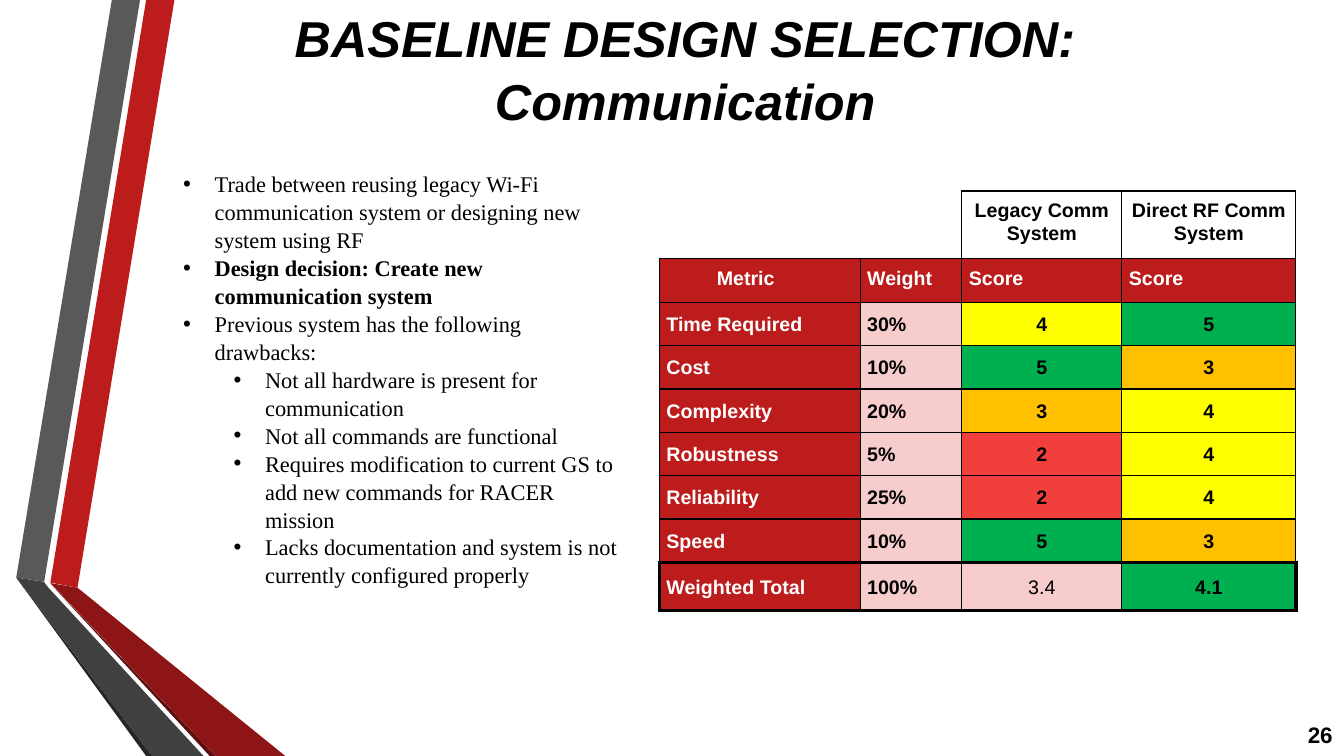
from lxml import etree
from pptx import Presentation
from pptx.dml.color import RGBColor
from pptx.enum.text import MSO_ANCHOR, PP_ALIGN
from pptx.oxml.ns import qn
from pptx.util import Pt

LEFT, CENTER, RIGHT, JUSTIFY = PP_ALIGN.LEFT, PP_ALIGN.CENTER, PP_ALIGN.RIGHT, PP_ALIGN.JUSTIFY
TOP, MIDDLE = MSO_ANCHOR.TOP, MSO_ANCHOR.MIDDLE

BLACK = RGBColor(0x00, 0x00, 0x00)
WHITE = RGBColor(0xFF, 0xFF, 0xFF)
RED = RGBColor(0xBC, 0x1C, 0x1C)
DARK_RED = RGBColor(0x8D, 0x15, 0x15)
DEEP_RED = RGBColor(0x5E, 0x0E, 0x0E)
GRAY = RGBColor(0x59, 0x59, 0x59)
DARK_GRAY = RGBColor(0x40, 0x40, 0x40)
DEEP_GRAY = RGBColor(0x26, 0x26, 0x26)
PINK = RGBColor(0xF7, 0xCC, 0xCC)
GREEN = RGBColor(0x00, 0xB0, 0x50)
YELLOW = RGBColor(0xFF, 0xFF, 0x00)
ORANGE = RGBColor(0xFF, 0xC0, 0x00)
LIGHT_RED = RGBColor(0xF1, 0x3F, 0x3B)
SCORE_FILLS = {5: GREEN, 4: YELLOW, 3: ORANGE, 2: LIGHT_RED}

SANS, SERIF = "Arial", "Times New Roman"
NO_STYLE = "{2D5ABB26-0587-4C30-8999-92F81FD0307C}"

RIBBONS = [
    (RED, [(36, 416.2), (55.4, 419.8), (124.6, 0), (104.4, 0)]),
    (GRAY, [(100, 0), (79.9, 0), (11.6, 412.6), (31.6, 415.5)]),
    (DEEP_GRAY, [(11.6, 412.6), (104.4, 540), (108.7, 540)]),
    (DEEP_RED, [(36, 416.9), (149.8, 540), (154.1, 540)]),
    (DARK_RED, [(36, 416.5), (154.1, 540), (203.8, 540), (55.4, 419.8)]),
    (DARK_GRAY, [(145.4, 540), (34.6, 419.8), (31.3, 415.5), (11.6, 412.6), (108.7, 540)]),
]

BULLETS = [
    (0, False, "Trade between reusing legacy Wi-Fi communication system or designing new system using RF"),
    (0, True, "Design decision: Create new communication system"),
    (0, False, "Previous system has the following drawbacks:"),
    (1, False, "Not all hardware is present for communication"),
    (1, False, "Not all commands are functional"),
    (1, False, "Requires modification to current GS to add new commands for RACER mission"),
    (1, False, "Lacks documentation and system is not currently configured properly"),
]

SYSTEMS = ["Legacy Comm System", "Direct RF Comm System"]
HEADINGS = ["Metric", "Weight", "Score", "Score"]
METRICS = [
    ("Time Required", "30%", 4, 5),
    ("Cost", "10%", 5, 3),
    ("Complexity", "20%", 3, 4),
    ("Robustness", "5%", 2, 4),
    ("Reliability", "25%", 2, 4),
    ("Speed", "10%", 5, 3),
]
TOTALS = ("Weighted Total", "100%", "3.4", "4.1")


class SlideBuilder:
    """Holds the text style and the current slide, and adds elements to it."""

    def __init__(self, prs):
        self.slide = prs.slides.add_slide(prs.slide_layouts[5])
        self.color = BLACK
        self.spacing = 1.04

    def run(self, p, text, size, font=SANS, bold=True, italic=False, color=None):
        r = p.add_run()
        r.text = text
        r.font.name, r.font.size = font, Pt(size)
        r.font.bold, r.font.italic = bold, italic
        r.font.color.rgb = color or self.color

    def ribbon(self, color, points):
        start, *rest = [(Pt(x), Pt(y)) for x, y in points]
        builder = self.slide.shapes.build_freeform(*start)
        builder.add_line_segments(rest, close=True)
        sp = builder.convert_to_shape()
        sp.shadow.inherit = False
        sp.fill.solid()
        sp.fill.fore_color.rgb = color
        sp.line.fill.background()

    def title(self, text, x, y, w, h):
        sp = self.slide.shapes.title
        sp.left, sp.top, sp.width, sp.height = Pt(x), Pt(y), Pt(w), Pt(h)
        tf = sp.text_frame
        tf.word_wrap, tf.vertical_anchor = True, MIDDLE
        p = tf.paragraphs[0]
        p.alignment, p.line_spacing = CENTER, self.spacing
        self.run(p, text, 36, italic=True)
        self.slide.shapes._spTree.append(sp._element)

    def text_box(self, x, y, w, h, anchor=TOP):
        tf = self.slide.shapes.add_textbox(Pt(x), Pt(y), Pt(w), Pt(h)).text_frame
        tf.word_wrap, tf.vertical_anchor = True, anchor
        return tf

    def page_number(self, text, x, y, w, h):
        p = self.text_box(x, y, w, h, MIDDLE).paragraphs[0]
        p.alignment = RIGHT
        self.run(p, text, 16)

    def bullets(self, items, x, y, w, h):
        tf = self.text_box(x, y, w, h)
        for i, (level, bold, text) in enumerate(items):
            p = tf.add_paragraph() if i else tf.paragraphs[0]
            p.level, p.alignment, p.line_spacing = level, LEFT, self.spacing
            pPr = p._p.get_or_add_pPr()
            pPr.set("marL", str(Pt(22.5 + 36 * level)))
            pPr.set("indent", str(Pt(-22.5)))
            etree.SubElement(pPr, qn("a:buFont"), typeface=SANS)
            etree.SubElement(pPr, qn("a:buChar"), char="•")
            self.run(p, text, 16, SERIF, bold)

    def table(self, x, y, widths, heights):
        frame = self.slide.shapes.add_table(
            len(heights), len(widths), Pt(x), Pt(y), Pt(sum(widths)), Pt(sum(heights)))
        table = frame.table
        table.first_row = table.horz_banding = False
        table._tbl.tblPr.find(qn("a:tableStyleId")).text = NO_STYLE
        for column, width in zip(table.columns, widths):
            column.width = Pt(width)
        for row, height in zip(table.rows, heights):
            row.height = Pt(height)
        return table

    def cell(self, cell, text, fill, align, color=BLACK, bold=True, anchor=MIDDLE, indent=0):
        cell.fill.solid()
        cell.fill.fore_color.rgb = fill
        cell.vertical_anchor = anchor
        cell.margin_left = cell.margin_right = cell.margin_top = cell.margin_bottom = Pt(5)
        p = cell.text_frame.paragraphs[0]
        p.alignment, p.line_spacing = align, 1.07
        if indent:
            p._p.get_or_add_pPr().set("indent", str(Pt(indent)))
        self.run(p, text, 14, bold=bold, color=color)

    def borders(self, cell, **widths):
        tcPr = cell._tc.get_or_add_tcPr()
        sides = [side for side in "LRTB" if side in widths]
        for i, side in enumerate(sides):
            ln = etree.Element(qn("a:ln" + side), w=str(Pt(widths[side])))
            fill = etree.SubElement(ln, qn("a:solidFill"))
            etree.SubElement(fill, qn("a:srgbClr"), val=str(BLACK))
            tcPr.insert(i, ln)


def add_trade_table(b):
    """Add the weighted trade table with its scores coloured by value."""
    table = b.table(471, 136.5, [143.4, 72.7, 114.3, 124.3], [48.4] + [31] * 7 + [34.4])
    last_row, last_col = len(METRICS) + 2, len(HEADINGS) - 1
    for col, name in enumerate(SYSTEMS, 2):
        b.cell(table.cell(0, col), name, WHITE, CENTER, anchor=TOP)
    for col, name in enumerate(HEADINGS):
        b.cell(table.cell(1, col), name, RED, JUSTIFY, WHITE, anchor=TOP, indent=0 if col else 36)
    for row, (name, weight, *scores) in enumerate([*METRICS, TOTALS], 2):
        b.cell(table.cell(row, 0), name, RED, JUSTIFY, WHITE)
        b.cell(table.cell(row, 1), weight, PINK, JUSTIFY)
        for col, score in enumerate(scores, 2):
            total_fill = GREEN if col == last_col else PINK
            b.cell(table.cell(row, col), str(score), SCORE_FILLS.get(score, total_fill), CENTER,
                   bold=score != "3.4")
    b.borders(table.cell(0, 0), B=1)
    b.borders(table.cell(0, 1), R=1, B=1)
    for row in range(last_row + 1):
        for col in range(0 if row else 2, last_col + 1):
            total = row == last_row
            b.borders(table.cell(row, col),
                      L=3 if total and col == 0 else 1,
                      R=3 if total and col == last_col else 1,
                      T=3 if total else 1,
                      B=3 if row >= last_row - 1 else 1)


def main():
    """Build the communication trade slide."""
    prs = Presentation()
    prs.slide_width, prs.slide_height = Pt(960), Pt(540)
    b = SlideBuilder(prs)
    for color, points in RIBBONS:
        b.ribbon(color, points)
    b.title("BASELINE DESIGN SELECTION: Communication", 95, -20.9, 789, 138.2)
    b.page_number("26", 915.8, 510.5, 43.2, 28.8)
    add_trade_table(b)
    b.bullets(BULLETS, 123.8, 117.4, 325.4, 319.7)
    prs.save("out.pptx")


if __name__ == "__main__":
    main()
